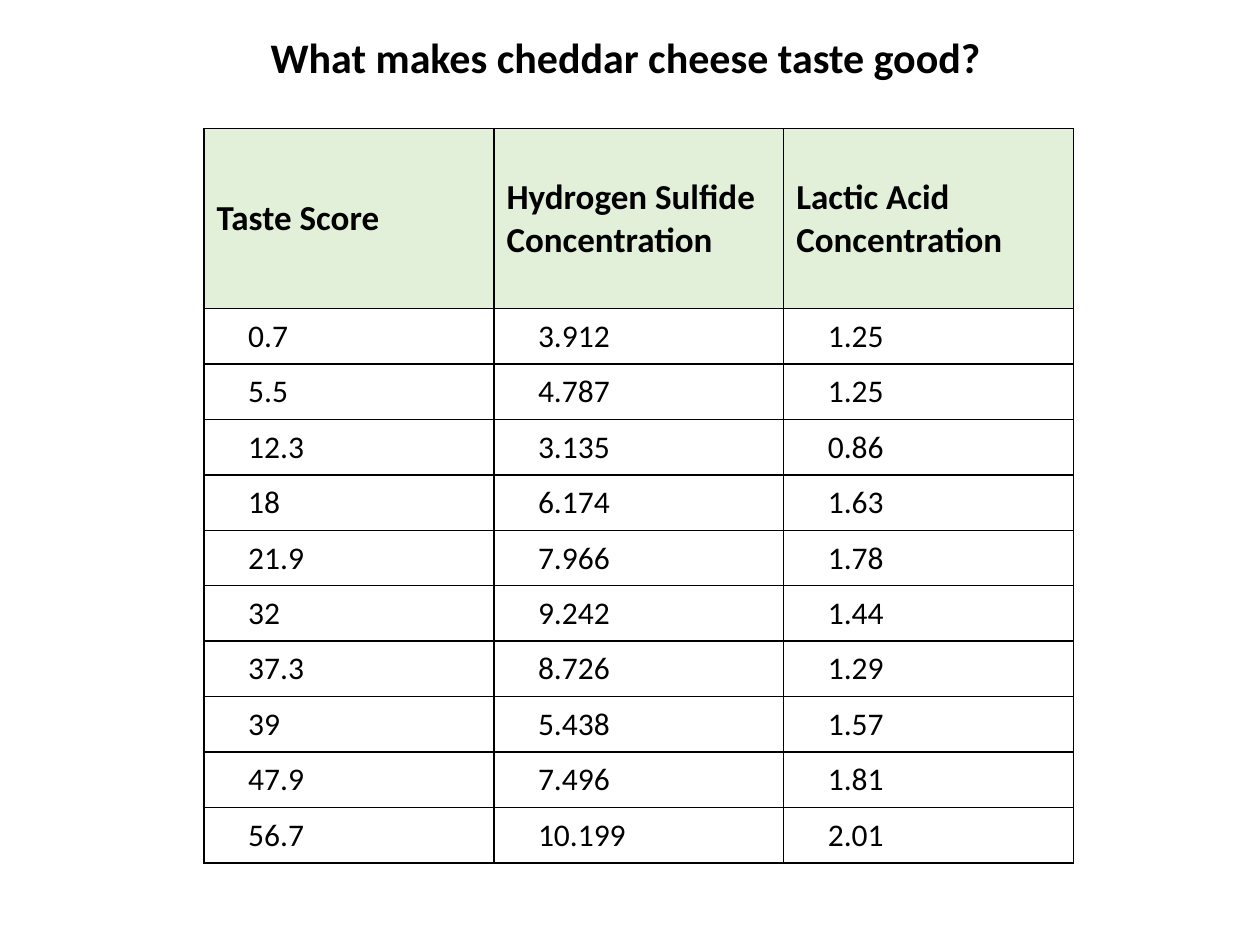
from lxml.etree import SubElement
from pptx import Presentation
from pptx.dml.color import RGBColor
from pptx.enum.text import MSO_ANCHOR as Anchor
from pptx.oxml.ns import qn
from pptx.util import Inches, Pt

WIDE, HIGH = Inches(10), Inches(7.5)
BLACK = RGBColor(0x00, 0x00, 0x00)
GREEN = RGBColor(0xE2, 0xF0, 0xD9)
FONT = "Calibri"

TITLE = "What makes cheddar cheese taste good?"
HEADS = ["Taste Score", "Hydrogen Sulfide Concentration",
         "Lactic Acid Concentration"]
ROWS = [
    ("0.7", "3.912", "1.25"),
    ("5.5", "4.787", "1.25"),
    ("12.3", "3.135", "0.86"),
    ("18", "6.174", "1.63"),
    ("21.9", "7.966", "1.78"),
    ("32", "9.242", "1.44"),
    ("37.3", "8.726", "1.29"),
    ("39", "5.438", "1.57"),
    ("47.9", "7.496", "1.81"),
    ("56.7", "10.199", "2.01"),
]
COL, HEAD, ROW = Inches(2.3), Inches(1.43), Inches(0.44)


def set_text(frame, text, size, bold):
    frame.text = text
    for run in frame.paragraphs[0].runs:
        font = run.font
        font.name, font.size, font.bold = FONT, Pt(size), bold
        font.color.rgb = BLACK


def add_title(slide):
    box = slide.shapes.add_textbox(Inches(2.05), Inches(0.2),
                                   Inches(6.77), Inches(0.5))
    box.text_frame.word_wrap = True
    set_text(box.text_frame, TITLE, 24, True)


def add_edges(cell):
    """Draw a thin line on all four sides of a cell."""
    props = cell._tc.get_or_add_tcPr()
    for side in ("a:lnL", "a:lnR", "a:lnT", "a:lnB"):
        line = SubElement(props, qn(side), w=str(Pt(1)))
        fill = SubElement(line, qn("a:solidFill"))
        SubElement(fill, qn("a:srgbClr"), val=str(BLACK))


def fill_head(cell, text):
    set_text(cell.text_frame, text, 20, True)
    cell.fill.solid()
    cell.fill.fore_color.rgb = GREEN


def fill_body(cell, text):
    set_text(cell.text_frame, text, 18, False)
    cell.margin_left, cell.margin_right = Inches(0.35), Inches(0.15)
    cell.margin_top = cell.margin_bottom = Inches(0.07)
    cell.fill.background()


def add_grid(slide):
    data = [HEADS, *ROWS]
    cols = len(HEADS)
    table = slide.shapes.add_table(
        len(data), cols, Inches(1.62), Inches(1.02),
        COL * cols, HEAD + ROW * len(ROWS)).table
    table.first_row = table.horz_banding = False
    for col in table.columns:
        col.width = COL
    for r, texts in enumerate(data):
        table.rows[r].height = ROW if r else HEAD
        for c, text in enumerate(texts):
            cell = table.cell(r, c)
            cell.vertical_anchor = Anchor.MIDDLE
            add_edges(cell)
            (fill_body if r else fill_head)(cell, text)


def main():
    deck = Presentation()
    deck.slide_width, deck.slide_height = WIDE, HIGH
    slide = deck.slides.add_slide(deck.slide_layouts[6])
    add_title(slide)
    add_grid(slide)
    deck.save("out.pptx")


if __name__ == "__main__":
    main()
